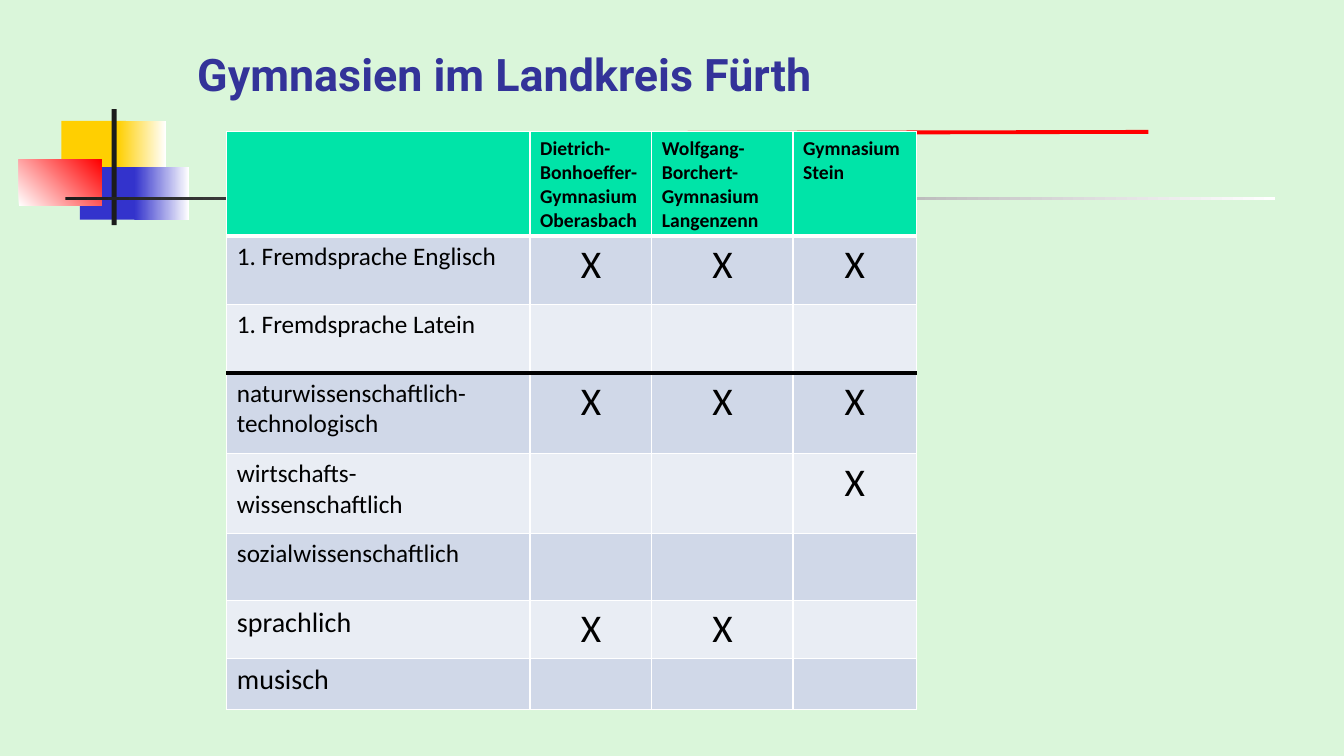
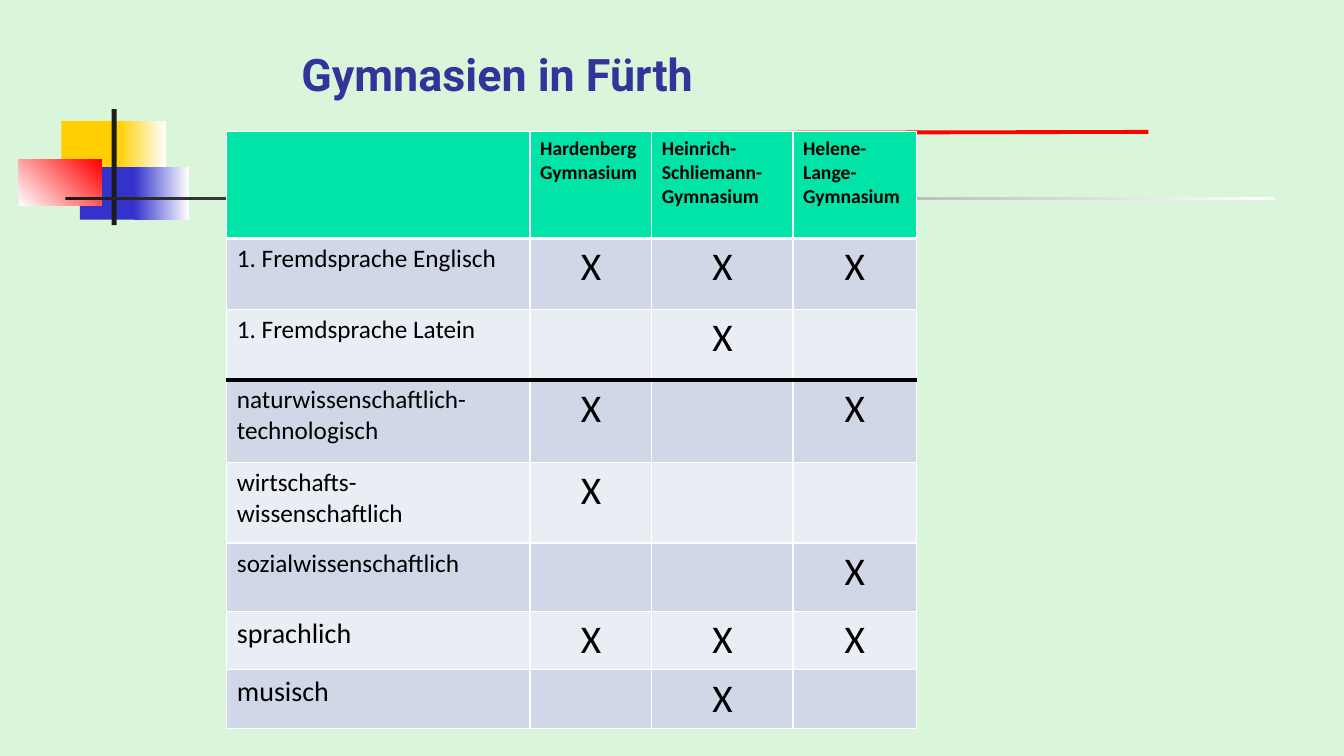
from lxml.etree import SubElement as Sub
from pptx import Presentation
from pptx.dml.color import RGBColor as Rgb
from pptx.enum.shapes import MSO_CONNECTOR as Link, MSO_SHAPE as Form
from pptx.enum.text import MSO_ANCHOR as Anchor, PP_ALIGN as Align
from pptx.oxml.ns import qn
from pptx.util import Inches, Pt

COLS, ROWS = 160, 90  # grid cells across and down the slide
HUES = {
    "back": "DAF6DA", "title": "333399", "gold": "FFCF01", "blue": "3333CC",
    "red": "FF0000", "ink": "1C1C1C", "white": "FFFFFF", "black": "000000",
    "head": "00E4A8", "odd": "D0D8E8", "even": "E9EDF4",
}

# Column, row, width, height, start hue, end hue, angle
BLOCKS = [
    (7.3, 14.4, 7.7, 6.25, "gold", None, 0),
    (14, 14.4, 5.75, 6.25, "gold", "white", 0),
    (9.5, 19.9, 7.45, 6.25, "blue", None, 0),
    (16, 19.9, 6.5, 6.25, "blue", "white", 0),
    (2.25, 19, 9.85, 5.5, "white", "red", 45),
    (13.3, 13, 0.6, 13.8, "ink", None, 0),
    (7.8, 23.4, 144, 0.4, "ink", "white", 0),
]

# Label and text size of each table row
TOPICS = [
    ("1. Fremdsprache Englisch", 18),
    ("1. Fremdsprache Latein", 18),
    ("naturwissenschaftlich-technologisch", 18),
    ("wirtschafts-\nwissenschaftlich", 18),
    ("sozialwissenschaftlich", 18),
    ("sprachlich", 20),
    ("musisch", 20),
]
WIDTHS = [36.1, 14.5, 16.8, 14.7]
RULES = {0: ("white", 3), 2: ("black", 3)}  # heavy lines below these rows

# Title, its column, schools, marks per topic, row heights
PAGES = [
    ("Gymnasien im Landkreis Fürth", 22.3,
     ["Dietrich-Bonhoeffer-Gymnasium Oberasbach",
      "Wolfgang-Borchert-Gymnasium\nLangenzenn", "Gymnasium\nStein"],
     ["XXX", "   ", "XXX", "  X", "   ", "XX ", "   "],
     [12.35, 8.15, 8.15, 9.6, 9.5, 8, 6.85, 6.15]),
    ("Gymnasien in Fürth", 34.7,
     ["Hardenberg Gymnasium", "Heinrich- Schliemann- Gymnasium",
      "Helene- Lange- Gymnasium"],
     ["XXX", " X ", "X X", "X  ", "  X", "XXX", " X "],
     [12.7, 8.4, 8.4, 9.85, 9.6, 8.15, 6.95, 6.95]),
]


def hue(name):
    return Rgb.from_string(HUES[name])


class Deck:
    def __init__(self):
        self.prs = Presentation()
        self.prs.slide_width = Inches(13.33)
        self.prs.slide_height = Inches(7.5)
        fill = self.prs.slide_master.background.fill
        fill.solid()
        fill.fore_color.rgb = hue("back")

    def x(self, col):
        return round(self.prs.slide_width * col / COLS)

    def y(self, row):
        return round(self.prs.slide_height * row / ROWS)

    def box(self, col, row, wide, high):
        return self.x(col), self.y(row), self.x(wide), self.y(high)

    def page(self):
        """Start a slide with the shared ornament."""
        self.slide = self.prs.slides.add_slide(self.prs.slide_layouts[6])
        self.art = self.slide.shapes
        for block in BLOCKS:
            self.block(*block)
        self.line((27, 15.95), (136.7, 15.7), "red", 2.75)

    def block(self, col, row, wide, high, start, end, angle):
        shape = self.art.add_shape(Form.RECTANGLE, *self.box(col, row, wide, high))
        shape.shadow.inherit = False
        shape.line.fill.background()
        if end is None:
            shape.fill.solid()
            shape.fill.fore_color.rgb = hue(start)
            return
        shape.fill.gradient()
        shape.fill.gradient_angle = angle
        for stop, name in zip(shape.fill.gradient_stops, (start, end)):
            stop.color.rgb = hue(name)

    def line(self, start, end, name, size):
        line = self.art.add_connector(
            Link.STRAIGHT, self.x(start[0]), self.y(start[1]),
            self.x(end[0]), self.y(end[1]))
        line.line.color.rgb = hue(name)
        line.line.width = Pt(size)
        Sub(line._element.spPr, qn("a:effectLst"))

    def text(self, frame, words, size, name="black", font="Calibri",
             bold=False, align=Align.LEFT):
        frame.word_wrap = True
        for i, part in enumerate(words.split("\n")):
            para = frame.add_paragraph() if i else frame.paragraphs[0]
            para.alignment = align
            run = para.add_run()
            run.text = part
            run.font.size, run.font.bold = Pt(size), bold
            run.font.name = font
            run.font.color.rgb = hue(name)

    def title(self, words, col):
        frame = self.art.add_textbox(*self.box(col, 3.4, 89.8, 9.1)).text_frame
        frame.vertical_anchor = Anchor.BOTTOM
        self.text(frame, words, 32, "title", "Roboto", True)

    def cell(self, cell, fill, over, under):
        """Set borders, then the fill that must follow them."""
        thin = ("white", 1)
        props = cell._tc.get_or_add_tcPr()
        for side, (name, size) in zip("LRTB", (thin, thin, over, under)):
            edge = Sub(props, qn("a:ln" + side), w=str(Pt(size)))
            Sub(Sub(edge, qn("a:solidFill")), qn("a:srgbClr"), val=HUES[name])
        cell.fill.solid()
        cell.fill.fore_color.rgb = hue(fill)

    def table(self, schools, marks, highs):
        size = self.box(27, 15.7, sum(WIDTHS), sum(highs))
        grid = self.art.add_table(len(highs), len(WIDTHS), *size).table
        grid.first_row = grid.horz_banding = False
        for col, wide in zip(grid.columns, WIDTHS):
            col.width = self.x(wide)
        thin = ("white", 1)
        for r, high in enumerate(highs):
            grid.rows[r].height = self.y(high)
            fill = "head" if r == 0 else "odd" if r % 2 else "even"
            for c in range(len(WIDTHS)):
                self.cell(grid.cell(r, c), fill,
                          RULES.get(r - 1, thin), RULES.get(r, thin))
        # Header
        for c, school in enumerate(schools, 1):
            self.text(grid.cell(0, c).text_frame, school, 14, bold=True)
        # Topics and marks
        for r, ((topic, points), row) in enumerate(zip(TOPICS, marks), 1):
            self.text(grid.cell(r, 0).text_frame, topic, points)
            for c, mark in enumerate(row, 1):
                if mark == "X":
                    self.text(grid.cell(r, c).text_frame, mark, 28,
                              align=Align.CENTER)


def main():
    deck = Deck()
    for title, col, schools, marks, highs in PAGES:
        deck.page()
        deck.title(title, col)
        deck.table(schools, marks, highs)
    deck.prs.save("out.pptx")


if __name__ == "__main__":
    main()
